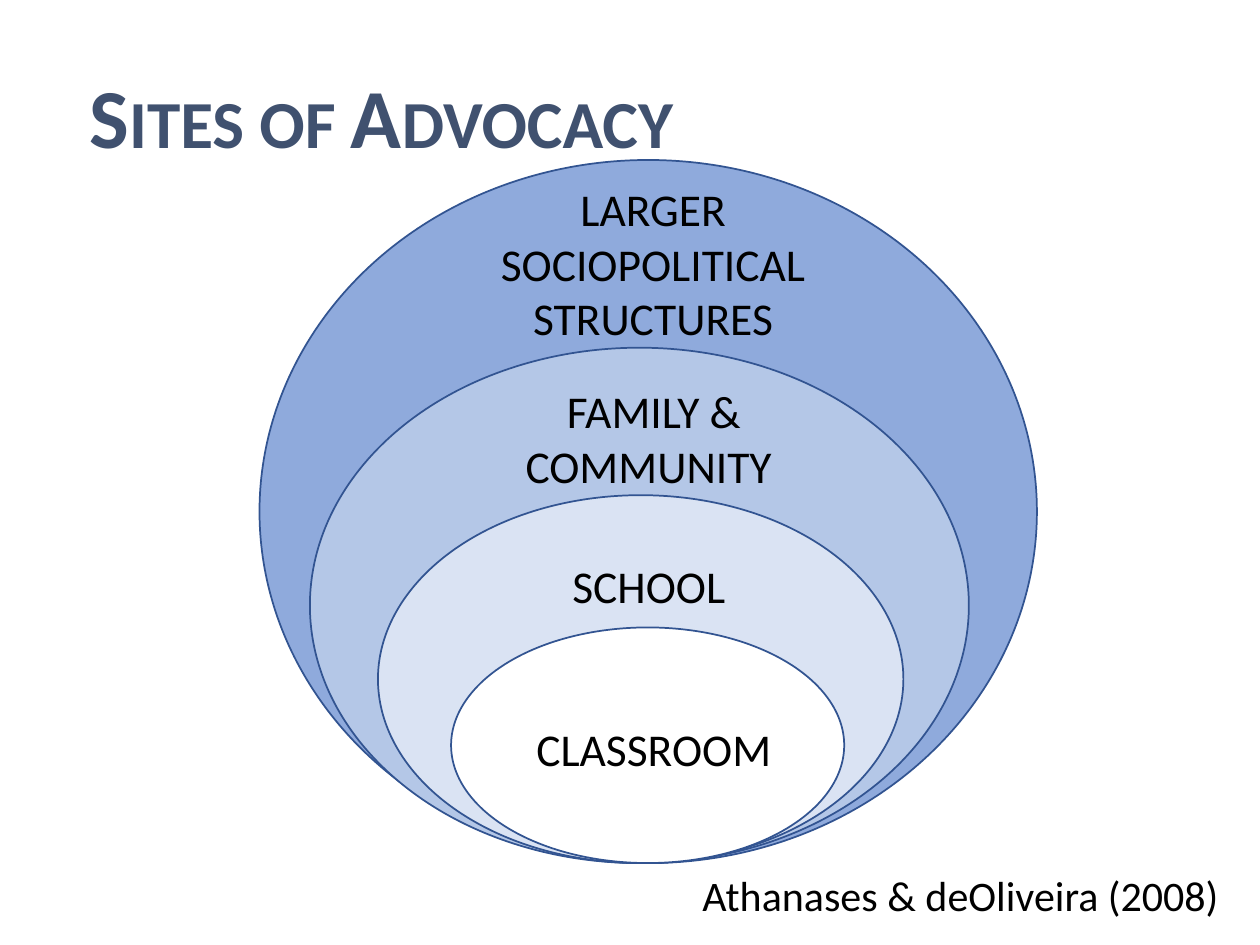
from pptx import Presentation
from pptx.dml.color import RGBColor
from pptx.enum.shapes import MSO_SHAPE
from pptx.enum.text import MSO_ANCHOR, MSO_AUTO_SIZE, PP_ALIGN
from pptx.util import Inches, Pt

OVAL = MSO_SHAPE.OVAL
BOTTOM = MSO_ANCHOR.BOTTOM
NONE, GROW = MSO_AUTO_SIZE.NONE, MSO_AUTO_SIZE.SHAPE_TO_FIT_TEXT
LEFT, CENTER, RIGHT = PP_ALIGN.LEFT, PP_ALIGN.CENTER, PP_ALIGN.RIGHT

SLATE = RGBColor(0x40, 0x51, 0x6F)
NAVY = RGBColor(0x32, 0x54, 0x91)
BLUE = RGBColor(0x8F, 0xAA, 0xDC)
SKY = RGBColor(0xB4, 0xC7, 0xE7)
PALE = RGBColor(0xDA, 0xE3, 0xF3)
WHITE = RGBColor(0xFF, 0xFF, 0xFF)
BLACK = RGBColor(0, 0, 0)
BASE = 6.85


def style(para, size, color, align):
    para.alignment = align
    para.font.name = "Calibri"
    para.font.size = Pt(size)
    para.font.color.rgb = color


def label(text, left, top, width, height, size=26, align=CENTER):
    box = slide.shapes.add_textbox(
        Inches(left), Inches(top), Inches(width), Inches(height))
    frame = box.text_frame
    frame.word_wrap = True
    frame.auto_size = GROW
    frame.text = text
    style(frame.paragraphs[0], size, BLACK, align)


deck = Presentation()
deck.slide_width = Inches(10)
deck.slide_height = Inches(7.5)
slide = deck.slides.add_slide(deck.slide_layouts[5])

title = slide.shapes.title
title.left, title.top = Inches(0.61), Inches(0.16)
title.width, title.height = Inches(9.16), Inches(1.25)
frame = title.text_frame
frame.text = "Sites of Advocacy"
frame.auto_size = NONE
frame.vertical_anchor = BOTTOM
frame.margin_left = frame.margin_right = Inches(0.1)
frame.margin_top = frame.margin_bottom = Inches(0.1)
para = frame.paragraphs[0]
style(para, 48, SLATE, LEFT)
para.font.bold = True
para.runs[0]._r.get_or_add_rPr().set("cap", "small")

rings = [
    (2.06, 6.17, 5.58, BLUE),
    (2.46, 5.23, 4.09, SKY),
    (3, 4.17, 2.92, PALE),
    (3.58, 3.12, 1.87, WHITE),
]
for left, width, height, color in rings:
    ring = slide.shapes.add_shape(
        OVAL, Inches(left), Inches(BASE - height),
        Inches(width), Inches(height))
    ring.shadow.inherit = False
    ring.fill.solid()
    ring.fill.fore_color.rgb = color
    ring.line.color.rgb = NAVY
    ring.line.width = Pt(1)

label("CLASSROOM", 3.93, 5.67, 2.52, 0.54)
label("SCHOOL", 3.89, 4.38, 2.52, 0.54)
label("FAMILY & COMMUNITY ", 3.93, 2.99, 2.52, 0.98)
label("LARGER SOCIOPOLITICAL STRUCTURES", 3.6, 1.39, 3.17, 1.41)
label("Athanases & deOliveira (2008)", 5.02, BASE, 4.75, 0.5, 24, RIGHT)

deck.save("out.pptx")
